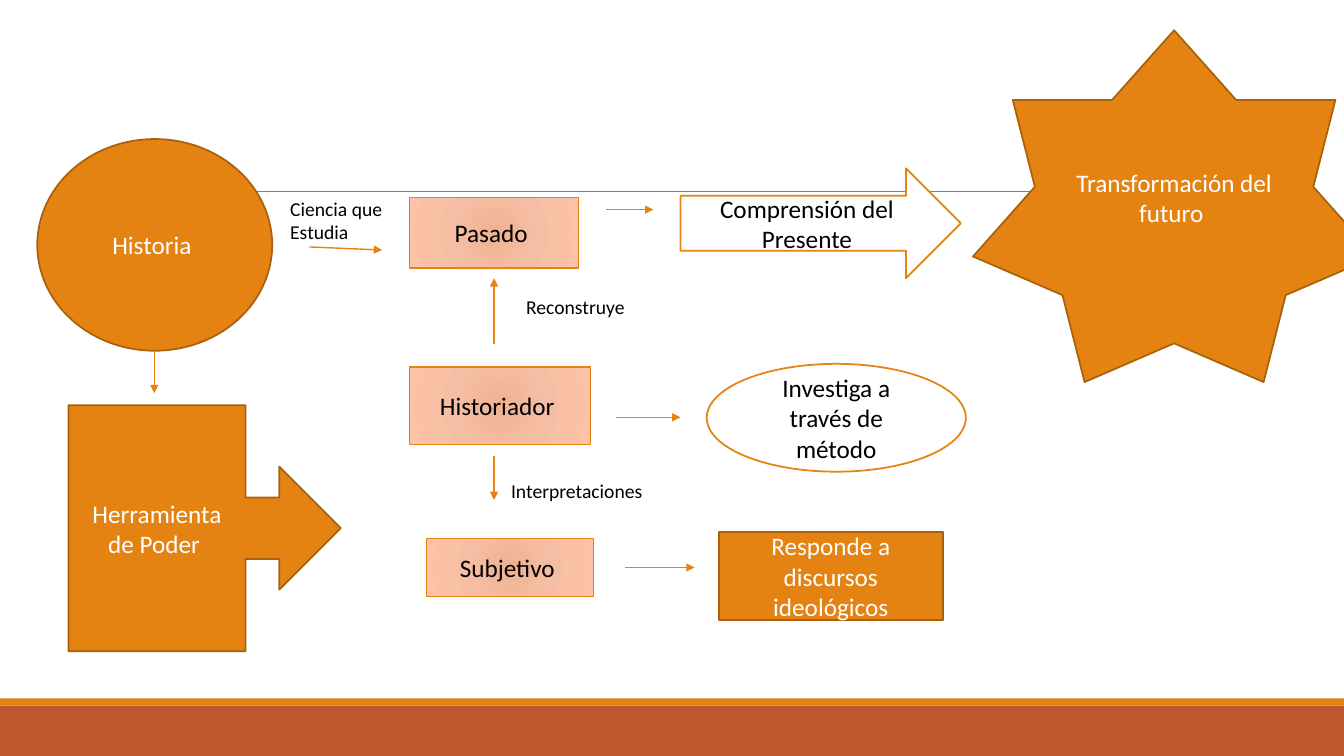
from typing import NamedTuple

from lxml import etree
from pptx import Presentation
from pptx import util as u
from pptx.dml.color import RGBColor
from pptx.enum import shapes, text
from pptx.oxml import ns

COLORS = {
    "orange": "E48312",
    "brown": "A9610D",
    "rust": "BD582C",
    "gray": "808080",
    "white": "FFFFFF",
    "black": "000000",
}
PEACH_STOPS = {0: "F0B191", 45: "F5BEA4", 100: "FDC3A8"}
FONT = "Calibri"
KIND = shapes.MSO_SHAPE


class Style(NamedTuple):
    fill: str
    line: str
    width: float
    ink: str


SOLID = Style("orange", "brown", 1.25, "white")
OUTLINE = Style("white", "orange", 1.25, "black")
PEACH = Style("peach", "orange", 1, "black")


class Node(NamedTuple):
    kind: shapes.MSO_SHAPE
    left: float
    top: float
    width: float
    height: float
    words: str
    style: Style


class Label(NamedTuple):
    left: float
    top: float
    width: float
    height: float
    words: str
    trailing: str = ""


class Link(NamedTuple):
    x1: float
    y1: float
    x2: float
    y2: float
    color: str = "orange"
    width: float = 1
    arrow: bool = True


class Band(NamedTuple):
    top: float
    height: float
    color: str


BANDS = [Band(7, 0.5, "rust"), Band(6.93, 0.07, "orange")]

RULE = Link(1.31, 1.9, 12.21, 1.9, "gray", 0.5, False)

NODES = [
    Node(KIND.OVAL, 0.37, 1.38, 2.33, 2.1, "Historia ", SOLID),
    Node(KIND.RECTANGLE, 4.06, 1.96, 1.68, 0.7, "Pasado ", PEACH),
    Node(KIND.RECTANGLE, 4.06, 3.64, 1.8, 0.77, "Historiador ", PEACH),
    Node(KIND.RECTANGLE, 4.23, 5.34, 1.66, 0.58, "Subjetivo ", PEACH),
    Node(KIND.RECTANGLE, 7.13, 5.28, 2.22, 0.87, "Responde a discursos ideológicos", SOLID),
    Node(KIND.RIGHT_ARROW, 6.75, 1.67, 2.78, 1.09, "Comprensión del Presente", OUTLINE),
    Node(KIND.STAR_7_POINT, 9.65, 0.3, 3.99, 3.49, "Transformación del futuro ", SOLID),
    Node(KIND.RIGHT_ARROW_CALLOUT, 0.68, 4.02, 2.7, 2.44, "Herramienta de Poder ", SOLID),
    Node(KIND.OVAL, 7.01, 3.61, 2.57, 1.07, "Investiga a través de método", OUTLINE),
]

LABELS = [
    Label(2.78, 1.9, 1.3, 0.57, "Ciencia que Estudia"),
    Label(5.12, 2.88, 2, 0.34, "Reconstruye"),
    Label(4.97, 4.65, 2.55, 0.4, "Interpretaciones", " "),
]

LINKS = [
    Link(3.07, 2.45, 3.79, 2.48),
    Link(4.9, 3.41, 4.9, 2.76),
    Link(4.9, 4.52, 4.9, 4.96),
    Link(6.2, 5.63, 6.89, 5.63),
    Link(6.01, 2.08, 6.48, 2.08),
    Link(1.53, 3.48, 1.53, 3.9),
    Link(6.11, 4.14, 6.75, 4.14),
]


def rgb(name: str) -> RGBColor:
    return RGBColor.from_string(COLORS[name])


def fill_peach(shape) -> None:
    shape.fill.gradient()
    gradient = shape._element.spPr.find(ns.qn("a:gradFill"))
    for child in list(gradient):
        gradient.remove(child)
    stops = etree.SubElement(gradient, ns.qn("a:gsLst"))
    for position, color in PEACH_STOPS.items():
        stop = etree.SubElement(stops, ns.qn("a:gs"), pos=str(position * 1000))
        etree.SubElement(stop, ns.qn("a:srgbClr"), val=color)
    radial = etree.SubElement(gradient, ns.qn("a:path"), path="circle")
    etree.SubElement(radial, ns.qn("a:fillToRect"), dict.fromkeys("ltrb", "100000"))


def draw_band(page, band: Band, width: int) -> None:
    bar = page.shapes.add_shape(
        KIND.RECTANGLE, 0, u.Inches(band.top), width, u.Inches(band.height)
    )
    bar.shadow.inherit = False
    bar.fill.solid()
    bar.fill.fore_color.rgb = rgb(band.color)
    bar.line.fill.background()


def draw_link(page, link: Link) -> None:
    line = page.shapes.add_connector(
        shapes.MSO_CONNECTOR.STRAIGHT, *(u.Inches(value) for value in link[:4])
    )
    line.line.color.rgb = rgb(link.color)
    line.line.width = u.Pt(link.width)
    if link.arrow:
        outline = line.line._get_or_add_ln()
        etree.SubElement(outline, ns.qn("a:tailEnd"), type="triangle")
    etree.SubElement(line._element.spPr, ns.qn("a:effectLst"))


def style_text(para, size: float, color: str) -> None:
    para.font.name = FONT
    para.font.size = u.Pt(size)
    para.font.color.rgb = rgb(color)


def draw_node(page, node: Node) -> None:
    shape = page.shapes.add_shape(node.kind, *(u.Inches(value) for value in node[1:5]))
    shape.shadow.inherit = False
    if node.style.fill == "peach":
        fill_peach(shape)
    else:
        shape.fill.solid()
        shape.fill.fore_color.rgb = rgb(node.style.fill)
    shape.line.color.rgb = rgb(node.style.line)
    shape.line.width = u.Pt(node.style.width)
    frame = shape.text_frame
    frame.word_wrap = True
    frame.vertical_anchor = text.MSO_ANCHOR.MIDDLE
    para = frame.paragraphs[0]
    para.text = node.words
    para.alignment = text.PP_ALIGN.CENTER
    style_text(para, 18, node.style.ink)


def draw_label(page, label: Label) -> None:
    box = page.shapes.add_textbox(*(u.Inches(value) for value in label[:4]))
    frame = box.text_frame
    frame.word_wrap = True
    frame.auto_size = text.MSO_AUTO_SIZE.SHAPE_TO_FIT_TEXT
    para = frame.paragraphs[0]
    para.text = label.words
    style_text(para, 14, "black")
    if label.trailing:
        span = para.add_run()
        span.text = label.trailing
        span.font.size = u.Pt(18)


def main() -> None:
    deck = Presentation()
    deck.slide_width = u.Inches(13.33)
    deck.slide_height = u.Inches(7.5)
    page = deck.slides.add_slide(deck.slide_layouts[6])
    for band in BANDS:
        draw_band(page, band, deck.slide_width)
    draw_link(page, RULE)
    for node in NODES:
        draw_node(page, node)
    for label in LABELS:
        draw_label(page, label)
    for link in LINKS:
        draw_link(page, link)
    deck.save("out.pptx")


if __name__ == "__main__":
    main()
